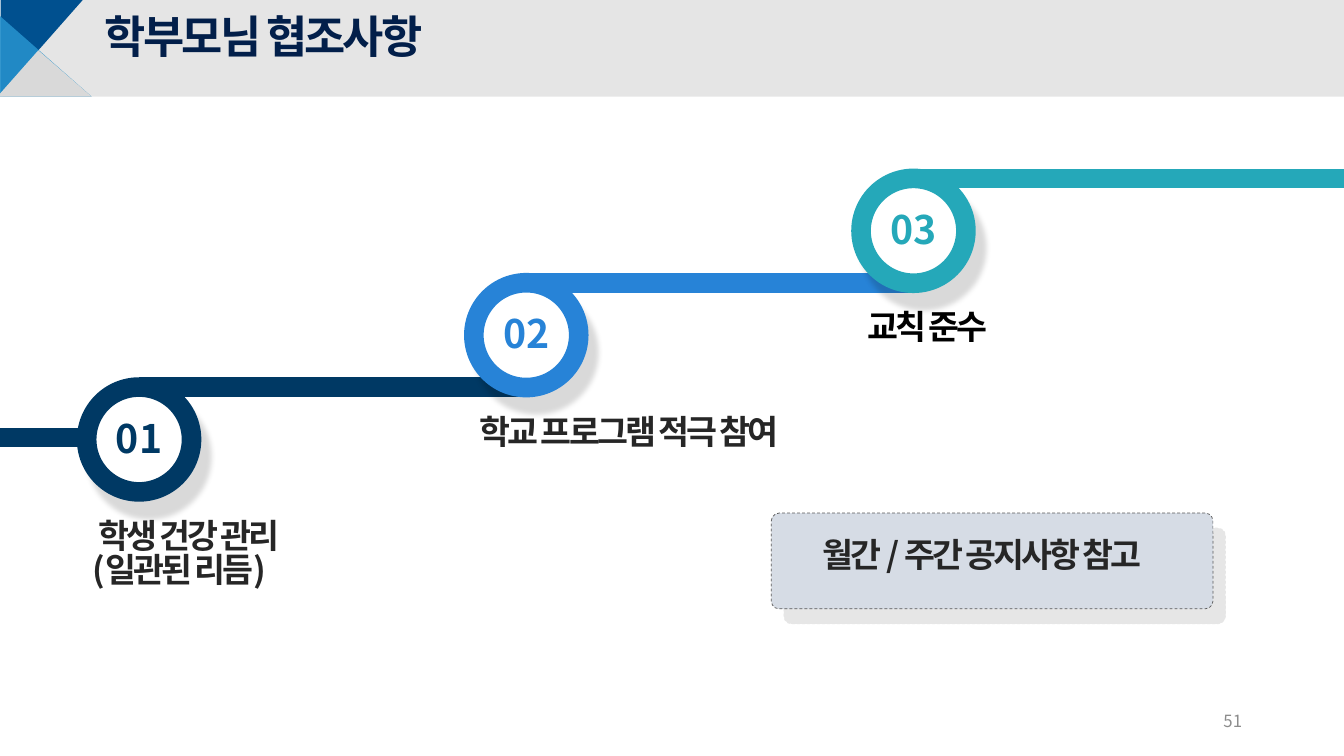
from lxml import etree
from pptx import Presentation
from pptx.dml.color import RGBColor
from pptx.enum.dml import MSO_LINE
from pptx.enum.shapes import MSO_CONNECTOR, MSO_SHAPE
from pptx.enum.text import MSO_ANCHOR, MSO_AUTO_SIZE, PP_ALIGN
from pptx.oxml.ns import qn
from pptx.util import Inches, Pt

FONT = "Noto Sans CJK KR"
NAVY = RGBColor(0x00, 0x39, 0x64)
BLUE = RGBColor(0x27, 0x83, 0xD7)
TEAL = RGBColor(0x25, 0xA8, 0xB9)
DEEP = RGBColor(0x00, 0x50, 0x8F)
SKY = RGBColor(0x26, 0x91, 0xCC)
INK = RGBColor(0x02, 0x1F, 0x4A)
DARK = RGBColor(0x26, 0x26, 0x26)
BLACK = RGBColor(0, 0, 0)
WHITE = RGBColor(0xFF, 0xFF, 0xFF)
BAND = RGBColor(0xBF, 0xBF, 0xBF)
GRAY = RGBColor(0xD9, 0xD9, 0xD9)
PALE = RGBColor(0xD6, 0xDC, 0xE5)
EDGE = RGBColor(0x59, 0x59, 0x59)
SHADE = RGBColor(0xE6, 0xE6, 0xE6)
NOTE = RGBColor(0x8C, 0x8C, 0x8C)


class Board:
    """Holds the slide and draws its kinds of element."""

    def __init__(self, slide):
        self.slide = slide
        self.shapes = slide.shapes

    def paint(self, shape, fill, alpha=100):
        shape.shadow.inherit = False
        shape.fill.solid()
        shape.fill.fore_color.rgb = fill
        shape.line.fill.background()
        if alpha < 100:
            color = shape._element.spPr.find(qn("a:solidFill"))[0]
            etree.SubElement(color, qn("a:alpha"), val=str(alpha * 1000))

    def shape(self, kind, x, y, w, h, fill, alpha=100):
        shape = self.shapes.add_shape(
            kind, Inches(x), Inches(y), Inches(w), Inches(h))
        self.paint(shape, fill, alpha)
        return shape

    def form(self, points, fill):
        spots = [(Inches(x), Inches(y)) for x, y in points]
        pen = self.shapes.build_freeform(*spots[0])
        pen.add_line_segments(spots[1:], close=True)
        self.paint(pen.convert_to_shape(), fill)

    def line(self, x, y, end, color):
        line = self.shapes.add_connector(
            MSO_CONNECTOR.STRAIGHT, Inches(x), Inches(y), Inches(end), Inches(y))
        line.line.color.rgb = color
        line.line.width = Pt(14)
        etree.SubElement(line._element.spPr, qn("a:effectLst"))

    def shade(self, shape, color, alpha, blur, angle):
        effects = shape._element.spPr.find(qn("a:effectLst"))
        outer = etree.SubElement(
            effects, qn("a:outerShdw"), blurRad=str(Pt(blur)), dist=str(Pt(14)),
            dir=str(angle * 60000), algn="tl", rotWithShape="0")
        tint = etree.SubElement(outer, qn("a:srgbClr"), val=str(color))
        etree.SubElement(tint, qn("a:alpha"), val=str(alpha * 1000))

    def text(self, shape, words, size, color, bold=True, track=0,
             align=PP_ALIGN.LEFT, anchor=MSO_ANCHOR.TOP, space=None, foot=0):
        frame = shape.text_frame
        frame.text = words
        frame.word_wrap = True
        frame.auto_size = MSO_AUTO_SIZE.NONE
        frame.vertical_anchor = anchor
        frame.margin_left = frame.margin_right = frame.margin_top = 0
        frame.margin_bottom = Inches(foot)
        for para in frame.paragraphs:
            para.alignment = align
            if space:
                para.line_spacing = space
            for run in para.runs:
                font = run.font
                font.name, font.size, font.bold = FONT, Pt(size), bold
                font.color.rgb = color
                props = run._r.get_or_add_rPr()
                if track:
                    props.set("spc", str(track * 100))
                etree.SubElement(props, qn("a:ea"), typeface=FONT)
        return frame

    def label(self, x, y, w, h, words, color):
        box = self.shapes.add_textbox(
            Inches(x), Inches(y), Inches(w), Inches(h))
        return self.text(box, words, 24, color, track=-2, space=0.85)

    def ring(self, x, y, words, color):
        ring = self.shape(MSO_SHAPE.OVAL, x, y, 1.04, 1.04, WHITE)
        ring.line.color.rgb = color
        ring.line.width = Pt(14)
        self.shade(ring, BLACK, 15, 4, 60)
        self.text(ring, words, 28, color, align=PP_ALIGN.CENTER,
                  anchor=MSO_ANCHOR.MIDDLE, foot=0.04)

    def title(self, words):
        title = self.shapes.title
        title.left, title.top = Inches(1.04), Inches(0.17)
        title.width, title.height = Inches(10.26), Inches(0.61)
        self.text(title, words, 32, INK, track=-2, space=0.85)
        self.shapes._spTree.append(title._element)  # bring above the band


def main():
    deck = Presentation()
    deck.slide_width, deck.slide_height = Inches(13.33), Inches(7.5)
    board = Board(deck.slides.add_slide(deck.slide_layouts[5]))

    # Header band and corner
    board.shape(MSO_SHAPE.RECTANGLE, 0.03, 0, 13.33, 0.96, BAND, 40)
    corner = board.shape(
        MSO_SHAPE.RIGHT_TRIANGLE, -0.05, 0.05, 0.93, 0.82, DEEP)
    corner.rotation = 90
    board.shape(MSO_SHAPE.RIGHT_TRIANGLE, 0, 0.16, 0.91, 0.8, SKY, 89)
    board.form([(0.38, 0.5), (0.91, 0.96), (0, 0.96), (0, 0.93)], GRAY)
    board.title("학부모님 협조사항")

    # Rising steps: lines, then rings and labels
    steps = [("학생 건강 관리\n(일관된 리듬)", NAVY, DARK),
             ("학교 프로그램 적극 참여", BLUE, DARK),
             ("교칙 준수", TEAL, BLACK)]
    spots = [(0.86 + 3.84 * i, 1.77 + 2.07 * (1 - i / 2))
             for i in range(len(steps))]
    ends = [x + 0.52 for x, _ in spots[1:]] + [13.52]
    board.line(-0.05, 4.34, 1.16, NAVY)
    for (x, y), end, (_, color, _) in zip(spots, ends, steps):
        board.line(x + 0.52, y, end, color)
    for i, ((x, y), (words, color, ink)) in enumerate(zip(spots, steps), 1):
        board.ring(x, y, f"{i:02}", color)
        frame = board.label(x + 0.06, y + 1.33, 4.41, 0.8, words, ink)
        if i == 1:
            first = frame.paragraphs[0]._p.get_or_add_pPr()
            first.set("marL", str(Inches(0.06)))

    # Notice card
    card = board.shape(
        MSO_SHAPE.ROUNDED_RECTANGLE, 7.65, 5.09, 4.38, 0.95, PALE)
    card.adjustments[0] = 0.08
    card.line.color.rgb = EDGE
    card.line.width = Pt(0.5)
    card.line.dash_style = MSO_LINE.DASH
    board.shade(card, SHADE, 100, 0, 50)
    board.label(8.16, 5.36, 4.41, 0.66, "월간 / 주간 공지사항 참고", DARK)

    # Page number
    page = board.shapes.add_textbox(
        Inches(9.42), Inches(6.95), Inches(2.9), Inches(0.4))
    board.text(page, "51", 12, NOTE, bold=False, align=PP_ALIGN.RIGHT,
               anchor=MSO_ANCHOR.MIDDLE)

    deck.save("out.pptx")


if __name__ == "__main__":
    main()
